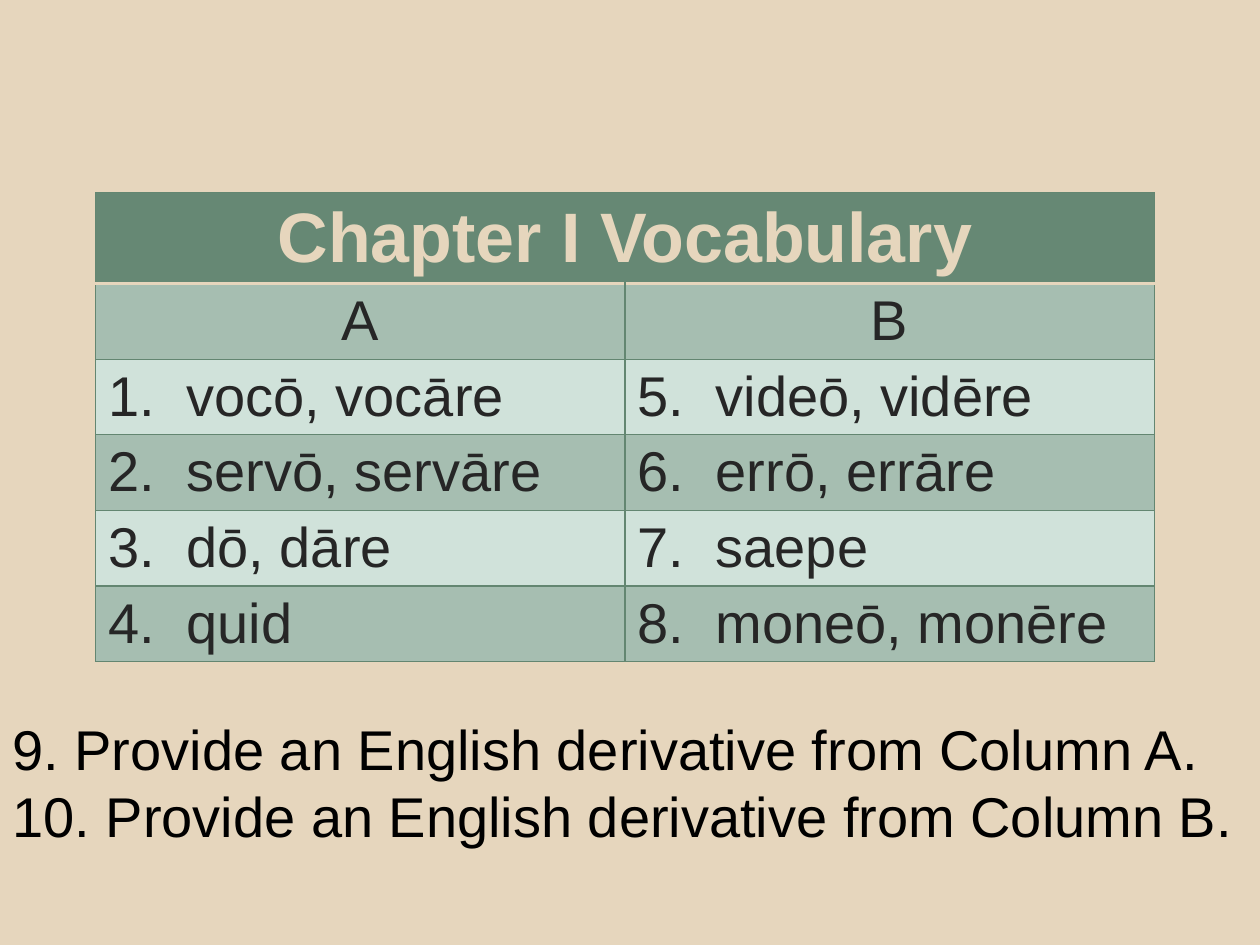
from itertools import product

from lxml.etree import SubElement
from pptx import Presentation
from pptx.dml.color import RGBColor
from pptx.enum.text import PP_ALIGN
from pptx.oxml.ns import qn
from pptx.util import Inches, Pt

SAND = RGBColor(0xE6, 0xD6, 0xBD)
GREEN = RGBColor(0x66, 0x88, 0x74)
SAGE = RGBColor(0xA6, 0xBE, 0xB1)
MINT = RGBColor(0xD0, 0xE2, 0xDA)
RULE = RGBColor(0x63, 0x86, 0x71)
CHARCOAL = RGBColor(0x26, 0x26, 0x26)
BLACK = RGBColor(0, 0, 0)

TITLE = "Chapter I Vocabulary"
COLUMNS = {
    "A": ["vocō, vocāre", "servō, servāre", "dō, dāre", "quid"],
    "B": ["videō, vidēre", "errō, errāre", "saepe", "moneō, monēre"],
}
TASKS = [
    "9. Provide an English derivative from Column A.",
    "10. Provide an English derivative from Column B.",
]


class VocabularySlide:
    """Hold the deck style and the slide being built."""

    font_name = "Arial"
    body_size = Pt(32)
    title_size = Pt(40)
    number_indent = Inches(0.62)

    def __init__(self, deck):
        self.slide = deck.slides.add_slide(deck.slide_layouts[6])
        background = self.slide.background.fill
        background.solid()
        background.fore_color.rgb = SAND

    def style(self, paragraph, size, color, bold=False, align=PP_ALIGN.LEFT):
        paragraph.alignment = align
        font = paragraph.font
        font.name, font.size, font.bold = self.font_name, size, bold
        font.color.rgb = color

    def border(self, cell, side, color, width):
        properties = cell._tc.get_or_add_tcPr()
        line = SubElement(properties, qn(f"a:ln{side}"), w=str(Pt(width)))
        fill = SubElement(line, qn("a:solidFill"))
        SubElement(fill, qn("a:srgbClr"), val=str(color))

    def cell(self, cell, text, fill, size, color, bold=False, align=PP_ALIGN.CENTER, edges=None):
        cell.text = text
        self.style(cell.text_frame.paragraphs[0], size, color, bold, align)
        for side in "LRTB":
            self.border(cell, side, *(edges or {}).get(side, (RULE, 0.75)))
        cell.fill.solid()
        cell.fill.fore_color.rgb = fill

    def number(self, cell):
        properties = cell.text_frame.paragraphs[0]._p.get_or_add_pPr()
        properties.set("marL", str(self.number_indent))
        properties.set("indent", str(-self.number_indent))

    def vocabulary(self, title, columns, left, top, width):
        words_per_column = len(next(iter(columns.values())))
        title_height, row_height = Inches(0.72), Inches(0.6)
        height = title_height + row_height * (words_per_column + 1)
        table = self.slide.shapes.add_table(
            words_per_column + 2, len(columns), left, top, width, height
        ).table
        for row in table.rows:
            row.height = row_height
        table.rows[0].height = title_height

        table.cell(0, 0).merge(table.cell(0, len(columns) - 1))
        title_rule = (SAND, 2)
        for column, heading in enumerate(columns):
            self.cell(table.cell(0, column), "" if column else title, GREEN,
                      self.title_size, SAND, True, edges={"B": title_rule})
            self.cell(table.cell(1, column), heading, SAGE,
                      self.body_size, CHARCOAL, edges={"T": title_rule})

        for column, row in product(range(len(columns)), range(words_per_column)):
            word = list(columns.values())[column][row]
            entry = table.cell(row + 2, column)
            self.cell(entry, f"{column * words_per_column + row + 1}.\t{word}",
                      SAGE if row % 2 else MINT, self.body_size, CHARCOAL,
                      align=PP_ALIGN.LEFT)
            self.number(entry)

    def tasks(self, lines, left, top, width, height):
        frame = self.slide.shapes.add_textbox(left, top, width, height).text_frame
        frame.word_wrap = True
        frame.text = "\n".join(lines)
        for paragraph in frame.paragraphs:
            self.style(paragraph, self.body_size, BLACK)


def main():
    deck = Presentation()
    deck.slide_width, deck.slide_height = Inches(10), Inches(7.5)
    page = VocabularySlide(deck)
    page.vocabulary(TITLE, COLUMNS, Inches(0.76), Inches(1.53), Inches(8.4))
    page.tasks(TASKS, Inches(0), Inches(5.62), Inches(10), Inches(1.18))
    deck.save("out.pptx")


if __name__ == "__main__":
    main()
